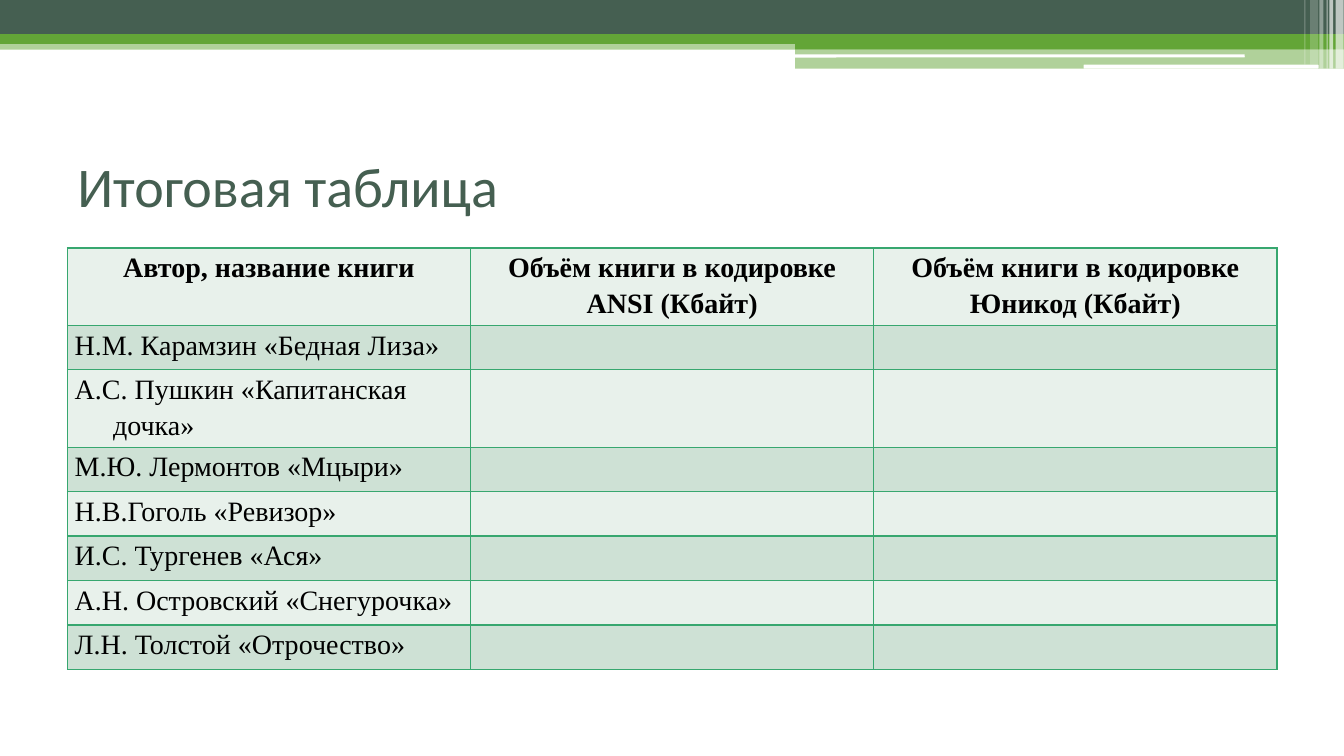
from lxml import etree
from pptx import Presentation
from pptx.dml.color import RGBColor
from pptx.enum.shapes import MSO_SHAPE
from pptx.enum.text import MSO_ANCHOR, PP_ALIGN
from pptx.oxml.ns import qn
from pptx.util import Cm, Pt

RECT, ROUND = MSO_SHAPE.RECTANGLE, MSO_SHAPE.ROUNDED_RECTANGLE
MIDDLE = MSO_ANCHOR.MIDDLE
CENTER, LEFT = PP_ALIGN.CENTER, PP_ALIGN.LEFT

DARK = RGBColor(0x45, 0x5F, 0x51)
GREEN = RGBColor(0x63, 0xA5, 0x37)
WHITE = RGBColor(0xFF, 0xFF, 0xFF)
BLACK = RGBColor(0, 0, 0)
BORDER = RGBColor(0x37, 0xA7, 0x6F)
BANDS = (RGBColor(0xE8, 0xF1, 0xEB), RGBColor(0xCE, 0xE1, 0xD5))

# Content
TITLE = "Итоговая таблица"
HEADERS = [
    "Автор, название книги",
    "Объём книги в кодировке ANSI (Кбайт)",
    "Объём книги в кодировке Юникод (Кбайт)",
]
BOOKS = [
    "Н.М. Карамзин «Бедная Лиза»",
    "А.С. Пушкин «Капитанская дочка»",
    "М.Ю. Лермонтов «Мцыри»",
    "Н.В.Гоголь «Ревизор»",
    "И.С. Тургенев «Ася»",
    "А.Н. Островский «Снегурочка»",
    "Л.Н. Толстой «Отрочество»",
]
ROWS = [HEADERS] + [[book, "", ""] for book in BOOKS]
TWO_LINE_ROWS = (0, 2)

# Layout in cm
SLIDE_W, SLIDE_H = 33.87, 19.05
MARGIN, TABLE_TOP, COL_W = 1.7, 6.25, 10.16
ROW_H, TALL_ROW_H = 1.12, 1.8
INDENT = 0.97

# Header stripes: shape, left, top, width, height, colour, opacity %
STRIPES = [
    (RECT, 0, 1.02, SLIDE_W, 0.23, GREEN, 50),
    (RECT, 0, 0, SLIDE_W, 0.86, DARK, 100),
    (RECT, 0, 0.86, SLIDE_W, 0.25, GREEN, 100),
    (RECT, 20.04, 0.99, 13.83, 0.25, GREEN, 100),
    (RECT, 20.04, 1.22, 13.83, 0.51, GREEN, 50),
    (ROUND, 20.02, 1.37, 11.35, 0.08, WHITE, 100),
    (ROUND, 27.31, 1.63, 5.92, 0.1, WHITE, 100),
]
# Vertical bars: left, width, height, opacity %
BARS = [
    (33.66, 0.2, 1.73, 65),
    (33.5, 0.1, 1.73, 65),
    (33.43, 0.03, 1.73, 60),
    (33.25, 0.1, 1.73, 40),
    (33.02, 0.2, 1.63, 20),
    (32.87, 0.03, 1.63, 30),
]
STRIPES += [(RECT, x, 0, w, h, WHITE, alpha) for x, w, h, alpha in BARS]

TITLE_FONT = {"name": "Calibri", "size": Pt(40)}
HEAD_FONT = {"name": "Times New Roman", "size": Pt(20), "bold": True}
BOOK_FONT = {**HEAD_FONT, "bold": False}


def add_text(p, text, font, color):
    r = p.add_run()
    r.text = text
    for name, value in font.items():
        setattr(r.font, name, value)
    r.font.color.rgb = color


def add_stripe(s, kind, x, y, w, h, color, alpha):
    sp = s.shapes.add_shape(kind, Cm(x), Cm(y), Cm(w), Cm(h))
    sp.shadow.inherit = False
    sp.fill.solid()
    sp.fill.fore_color.rgb = color
    sp.line.fill.background()
    if alpha < 100:
        clr = sp.fill._xPr.find(".//" + qn("a:srgbClr"))
        etree.SubElement(clr, qn("a:alpha"), val=str(alpha * 1000))


def add_borders(cell):
    tc_pr = cell._tc.get_or_add_tcPr()
    for side in ("lnL", "lnR", "lnT", "lnB"):
        ln = etree.SubElement(tc_pr, qn("a:" + side), w=str(Pt(1)))
        fill = etree.SubElement(ln, qn("a:solidFill"))
        etree.SubElement(fill, qn("a:srgbClr"), val=str(BORDER))


def fill_cell(cell, text, is_header, color):
    add_borders(cell)
    cell.fill.solid()
    cell.fill.fore_color.rgb = color
    if not text:
        return
    cell.margin_left = cell.margin_right = Cm(0.18)
    cell.margin_top = cell.margin_bottom = 0
    p = cell.text_frame.paragraphs[0]
    p.line_spacing = 1.15
    p.alignment = CENTER if is_header else LEFT
    if is_header:
        p.space_after = Pt(10)
    else:
        p_pr = p._p.get_or_add_pPr()
        p_pr.set("marL", str(Cm(INDENT)))
        p_pr.set("indent", str(-Cm(INDENT)))
    add_text(p, text, HEAD_FONT if is_header else BOOK_FONT, BLACK)


def main():
    prs = Presentation()
    prs.slide_width, prs.slide_height = Cm(SLIDE_W), Cm(SLIDE_H)
    s = prs.slides.add_slide(prs.slide_layouts[6])

    # Header decoration
    for stripe in STRIPES:
        add_stripe(s, *stripe)

    # Title
    table_w = COL_W * len(HEADERS)
    tf = s.shapes.add_textbox(Cm(MARGIN), Cm(3.18), Cm(table_w), Cm(2.97)).text_frame
    tf.word_wrap = True
    tf.vertical_anchor = MIDDLE
    add_text(tf.paragraphs[0], TITLE, TITLE_FONT, DARK)

    # Table
    heights = [TALL_ROW_H if i in TWO_LINE_ROWS else ROW_H for i in range(len(ROWS))]
    table = s.shapes.add_table(len(ROWS), len(HEADERS), Cm(MARGIN), Cm(TABLE_TOP),
                               Cm(table_w), Cm(sum(heights))).table
    for col in table.columns:
        col.width = Cm(COL_W)
    for i, texts in enumerate(ROWS):
        table.rows[i].height = Cm(heights[i])
        for j, text in enumerate(texts):
            fill_cell(table.cell(i, j), text, i == 0, BANDS[i % 2])

    prs.save("out.pptx")


if __name__ == "__main__":
    main()
